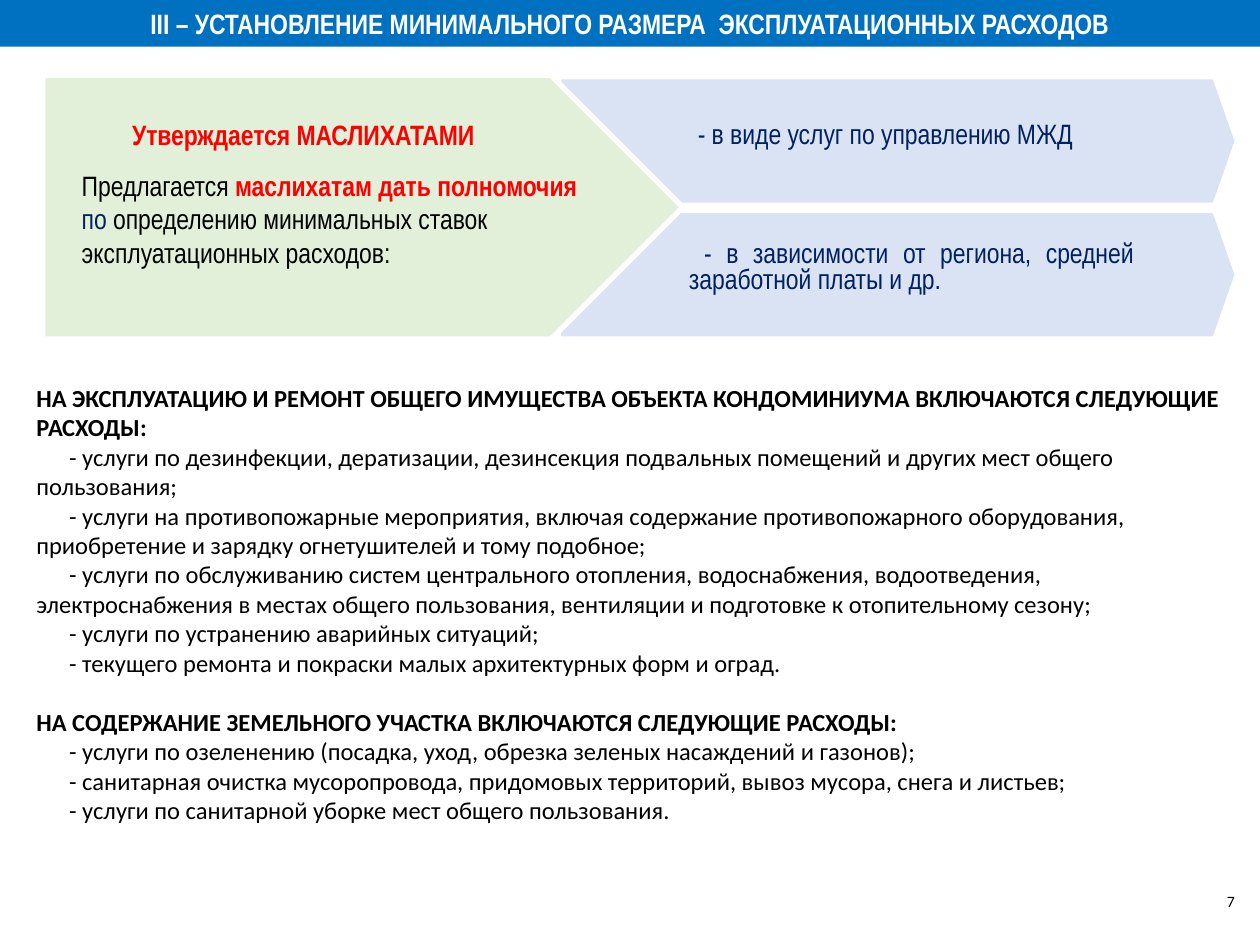
from pptx import Presentation
from pptx import util as u
from pptx.dml.color import RGBColor
from pptx.enum import shapes, text

WHITE = RGBColor(0xFF, 0xFF, 0xFF)
BLACK = RGBColor(0, 0, 0)
RED = RGBColor(0xFF, 0, 0)
NAVY = RGBColor(0x00, 0x20, 0x60)
BLUE = RGBColor(0x00, 0x70, 0xC0)
PALE_BLUE = RGBColor(0xDA, 0xE3, 0xF3)
PALE_GREEN = RGBColor(0xE2, 0xF0, 0xD9)
ALIGN = text.PP_ALIGN


class SlideBuilder:
    narrow = "Arial Narrow"
    plain = "Calibri"

    def __init__(self, slide):
        self.slide = slide
        slide.background.fill.solid()
        slide.background.fill.fore_color.rgb = WHITE

    def block(self, kind, box, fill, outline=None):
        shape = self.slide.shapes.add_shape(kind, *map(u.Inches, box))
        shape.shadow.inherit = False
        shape.fill.solid()
        shape.fill.fore_color.rgb = fill
        if outline is None:
            shape.line.fill.background()
        else:
            shape.line.color.rgb = outline
            shape.line.width = u.Pt(3)
        return shape

    def arrow(self, box, fill, point):
        shape = self.block(shapes.MSO_SHAPE.PENTAGON, box, fill, WHITE)
        shape.adjustments[0] = point

    def text_box(self, box):
        frame = self.slide.shapes.add_textbox(*map(u.Inches, box)).text_frame
        frame.word_wrap = True
        return frame

    def paragraph(self, frame, runs, size, font, align=ALIGN.LEFT, indent=0,
                  before=0, spacing=None):
        first = frame.paragraphs[0]
        paragraph = frame.add_paragraph() if first.runs else first
        paragraph.alignment = align
        paragraph.space_before = u.Pt(before)
        if spacing:
            paragraph.line_spacing = u.Pt(spacing)
        if indent:
            paragraph._p.get_or_add_pPr().set("indent", str(u.Inches(indent)))
        for wording, color, bold in runs:
            run = paragraph.add_run()
            run.text = wording
            run.font.name = font
            run.font.size = u.Pt(size)
            run.font.bold = bold
            run.font.color.rgb = color

    def heading(self, wording):
        shape = self.block(shapes.MSO_SHAPE.RECTANGLE, (0, 0, 10, 0.37), BLUE)
        shape.text_frame.word_wrap = True
        self.paragraph(shape.text_frame, [(wording, WHITE, True)], 16,
                       self.narrow, ALIGN.CENTER)

    def criterion(self, box, wording, indent):
        self.paragraph(self.text_box(box), [(wording, NAVY, False)], 16,
                       self.narrow, ALIGN.JUSTIFY, indent, spacing=15)

    def expenses(self, frame, title, items, before=0):
        self.paragraph(frame, [(title, BLACK, True)], 14, self.plain, before=before)
        for item in items:
            self.paragraph(frame, [("- " + item, BLACK, False)], 14, self.plain,
                           indent=0.26)

    def page_number(self, wording):
        frame = self.text_box((9.55, 6.95, 0.32, 0.4))
        frame.vertical_anchor = text.MSO_ANCHOR.MIDDLE
        frame.margin_left = frame.margin_right = u.Inches(0.07)
        frame.margin_top = frame.margin_bottom = u.Inches(0.04)
        self.paragraph(frame, [(wording, BLACK, False)], 9, self.plain, ALIGN.RIGHT)


def main():
    presentation = Presentation()
    presentation.slide_width = u.Inches(10)
    presentation.slide_height = u.Inches(7.5)
    builder = SlideBuilder(presentation.slides.add_slide(presentation.slide_layouts[6]))

    for top in (1.67, 0.61):
        builder.arrow((4.43, top, 5.39, 1.02), PALE_BLUE, 0.175)
    builder.heading("III – УСТАНОВЛЕНИЕ МИНИМАЛЬНОГО РАЗМЕРА  ЭКСПЛУАТАЦИОННЫХ РАСХОДОВ")
    builder.page_number("7")
    builder.arrow((0.34, 0.6, 5.08, 2.09), PALE_GREEN, 0.5)

    proposal = builder.text_box((0.55, 0.88, 4.2, 1.31))
    builder.paragraph(proposal, [("Утверждается МАСЛИХАТАМИ", RED, True)], 16,
                      builder.narrow, ALIGN.JUSTIFY, 0.4)
    builder.paragraph(proposal, [
        ("Предлагается ", BLACK, False),
        ("маслихатам дать полномочия ", RED, True),
        ("по ", NAVY, False),
        ("определению минимальных ставок эксплуатационных расходов:", BLACK, False),
    ], 16, builder.narrow, before=10)

    builder.criterion((5.38, 0.93, 3.73, 0.31),
                      "- в виде услуг по управлению МЖД", 0.06)
    builder.criterion((5.37, 1.88, 3.73, 0.52),
                      "- в зависимости от региона, средней заработной платы и др.", 0.12)

    details = builder.text_box((0.19, 2.99, 9.74, 3.64))
    builder.expenses(
        details,
        "НА ЭКСПЛУАТАЦИЮ И РЕМОНТ ОБЩЕГО ИМУЩЕСТВА ОБЪЕКТА КОНДОМИНИУМА "
        "ВКЛЮЧАЮТСЯ СЛЕДУЮЩИЕ РАСХОДЫ:",
        ["услуги по дезинфекции, дератизации, дезинсекция подвальных помещений "
         "и других мест общего пользования;",
         "услуги на противопожарные мероприятия, включая содержание противопожарного "
         "оборудования, приобретение и зарядку огнетушителей и тому подобное;",
         "услуги по обслуживанию систем центрального отопления, водоснабжения, "
         "водоотведения, электроснабжения в местах общего пользования, вентиляции "
         "и подготовке к отопительному сезону;",
         "услуги по устранению аварийных ситуаций;",
         "текущего ремонта и покраски малых архитектурных форм и оград."])
    builder.expenses(
        details,
        "НА СОДЕРЖАНИЕ ЗЕМЕЛЬНОГО УЧАСТКА ВКЛЮЧАЮТСЯ СЛЕДУЮЩИЕ РАСХОДЫ:",
        ["услуги по озеленению (посадка, уход, обрезка зеленых насаждений и газонов);",
         "санитарная очистка мусоропровода, придомовых территорий, вывоз мусора, "
         "снега и листьев;",
         "услуги по санитарной уборке мест общего пользования."],
        before=17)

    presentation.save("out.pptx")


if __name__ == "__main__":
    main()
